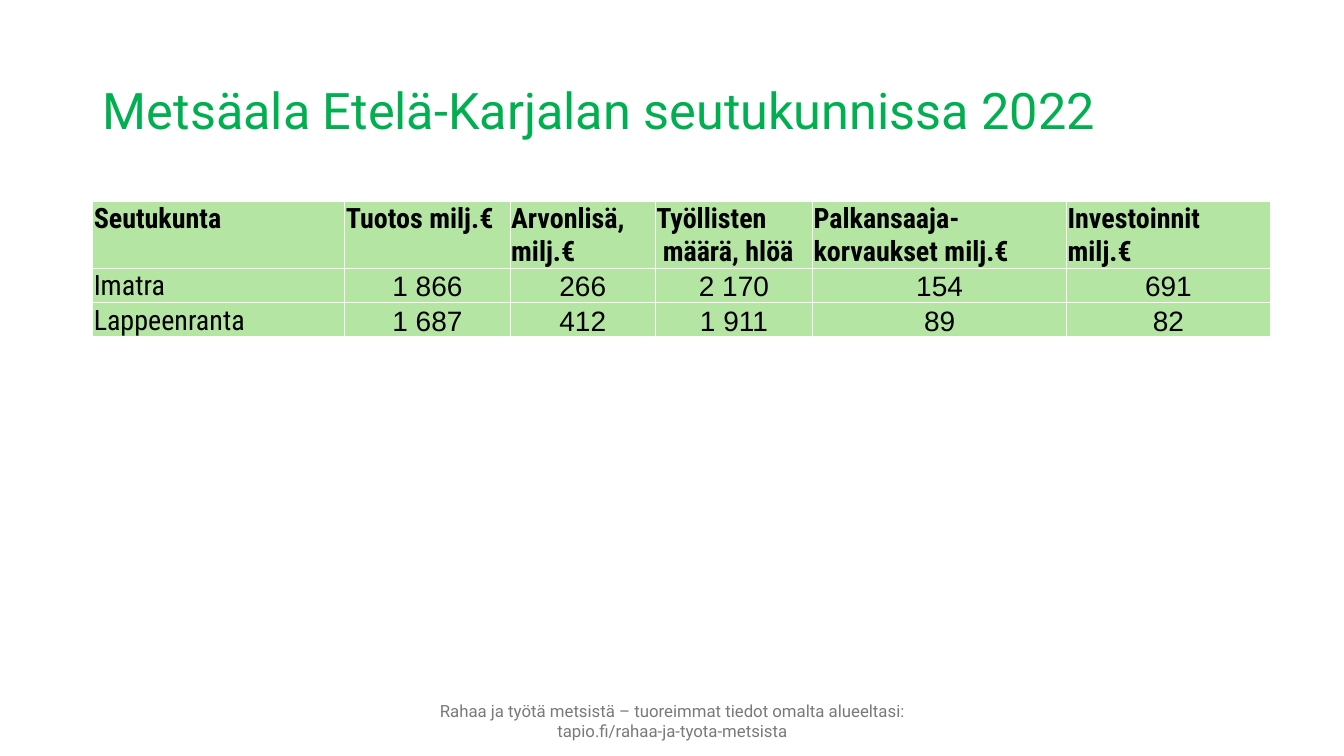
from pptx import Presentation
from pptx.dml.color import RGBColor
from pptx.enum.text import MSO_ANCHOR, MSO_AUTO_SIZE, PP_ALIGN
from pptx.oxml.ns import qn
from pptx.util import Inches, Pt
from lxml import etree

LEFT, CENTER = PP_ALIGN.LEFT, PP_ALIGN.CENTER
TOP, MIDDLE, BOTTOM = MSO_ANCHOR.TOP, MSO_ANCHOR.MIDDLE, MSO_ANCHOR.BOTTOM
NO_AUTOFIT = MSO_AUTO_SIZE.NONE
TITLE_ONLY = 5

COLORS = {
    "title": "00B050",
    "footer": "797979",
    "text": "000000",
    "cell": "B4E5A2",
    "border": "FFFFFF",
}
HEADINGS = [
    "Seutukunta",
    "Tuotos milj.€",
    "Arvonlisä, milj.€",
    "Työllisten\n määrä, hlöä",
    "Palkansaaja-korvaukset milj.€",
    "Investoinnit\nmilj.€",
]
REGIONS = [
    ["Imatra", "1 866", "266", "2 170", "154", "691"],
    ["Lappeenranta", "1 687", "412", "1 911", "89", "82"],
]
COLUMN_WIDTHS = [2.5, 1.64, 1.44, 1.56, 2.52, 2.02]
ROW_HEIGHTS = [0.65, 0.34, 0.34]


def set_attributes(target, values):
    for name, value in values.items():
        setattr(target, name, value)


def format_text(frame, color, align, **font_values):
    for paragraph in frame.paragraphs:
        paragraph.alignment = align
        for run in paragraph.runs:
            set_attributes(run.font, font_values)
            run.font.color.rgb = RGBColor.from_string(COLORS[color])


def place_title(slide, left, top, width, height):
    title = slide.shapes.title
    set_attributes(title, {"left": Inches(left), "top": Inches(top),
                           "width": Inches(width), "height": Inches(height)})
    frame = title.text_frame
    frame.text = "Metsäala Etelä-Karjalan seutukunnissa 2022"
    set_attributes(frame, {"word_wrap": True, "auto_size": NO_AUTOFIT,
                           "vertical_anchor": MIDDLE})
    frame.paragraphs[0].line_spacing = 0.9
    format_text(frame, "title", LEFT, name="Roboto", size=Pt(36))


def add_footer(slide, left, top, width, height):
    footer = slide.shapes.add_textbox(
        Inches(left), Inches(top), Inches(width), Inches(height))
    frame = footer.text_frame
    frame.text = ("Rahaa ja työtä metsistä – tuoreimmat tiedot omalta alueeltasi: "
                  "tapio.fi/rahaa-ja-tyota-metsista")
    set_attributes(frame, {"word_wrap": True, "auto_size": NO_AUTOFIT,
                           "vertical_anchor": MIDDLE})
    format_text(frame, "footer", CENTER, name="Roboto", size=Pt(12))


def add_borders(cell):
    properties = cell._tc.get_or_add_tcPr()
    for side in ("a:lnL", "a:lnR", "a:lnT", "a:lnB"):
        line = etree.SubElement(properties, qn(side), w=str(Pt(1)))
        fill = etree.SubElement(line, qn("a:solidFill"))
        etree.SubElement(fill, qn("a:srgbClr"), val=COLORS["border"])


def fill_cell(cell, text, is_heading, is_figure):
    inset = Inches(0 if is_figure else 0.01)
    cell.text = text
    set_attributes(cell, {"margin_left": inset, "margin_top": inset,
                          "margin_right": inset, "margin_bottom": 0,
                          "vertical_anchor": TOP if is_heading else BOTTOM})
    add_borders(cell)
    cell.fill.solid()
    cell.fill.fore_color.rgb = RGBColor.from_string(COLORS["cell"])
    format_text(cell.text_frame, "text", CENTER if is_figure else LEFT,
                name="Arial" if is_figure else "Roboto Condensed",
                size=Pt(20), bold=is_heading)


def add_region_table(slide, left, top):
    rows = [HEADINGS] + REGIONS
    table = slide.shapes.add_table(
        len(rows), len(HEADINGS), Inches(left), Inches(top),
        Inches(sum(COLUMN_WIDTHS)), Inches(sum(ROW_HEIGHTS))).table
    for column, width in zip(table.columns, COLUMN_WIDTHS):
        column.width = Inches(width)
    for row, height in zip(table.rows, ROW_HEIGHTS):
        row.height = Inches(height)
    for r, texts in enumerate(rows):
        for c, text in enumerate(texts):
            fill_cell(table.cell(r, c), text, r == 0, r > 0 and c > 0)


def main():
    deck = Presentation()
    deck.slide_width, deck.slide_height = Inches(13.33), Inches(7.5)
    slide = deck.slides.add_slide(deck.slide_layouts[TITLE_ONLY])
    place_title(slide, 0.92, 0.4, 11.5, 1.45)
    add_footer(slide, 4.26, 6.95, 4.82, 0.4)
    add_region_table(slide, 0.92, 2)
    deck.save("out.pptx")


if __name__ == "__main__":
    main()
